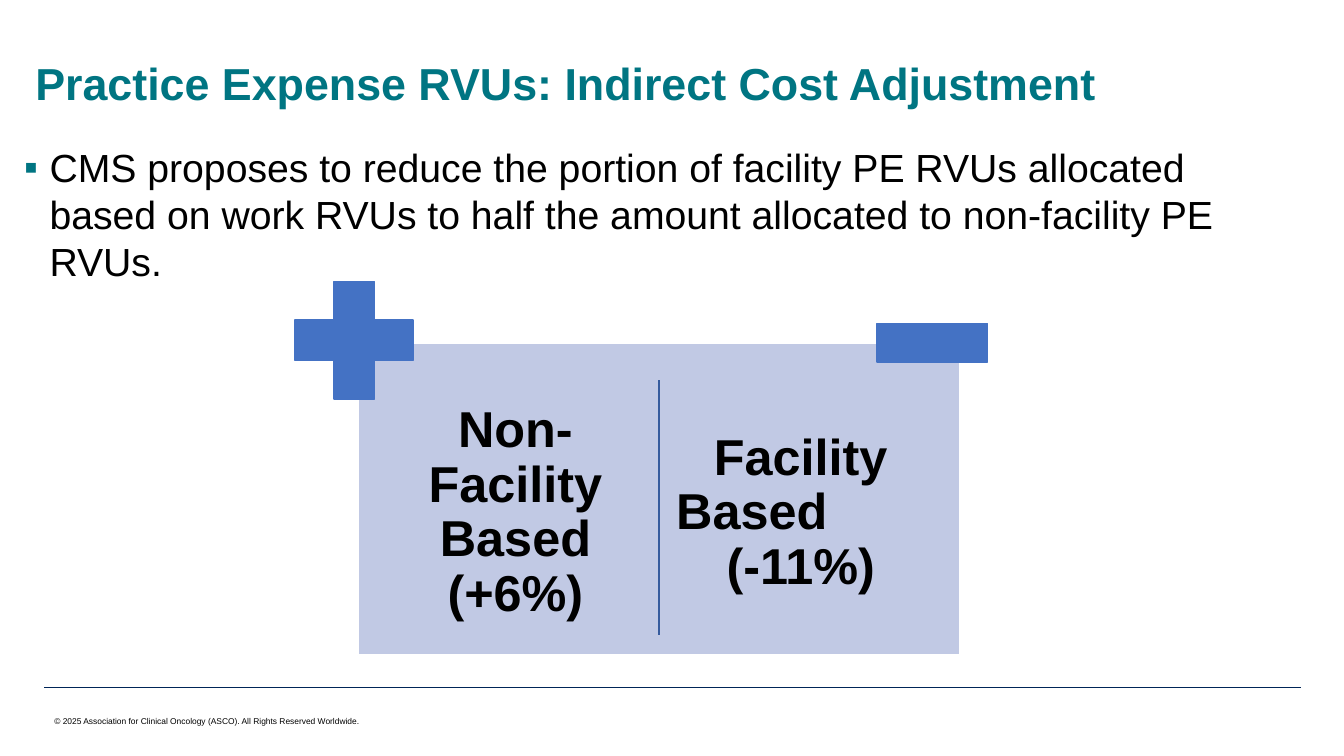
from pptx import Presentation
from pptx.dml.color import RGBColor
from pptx.enum.shapes import MSO_CONNECTOR, MSO_SHAPE
from pptx.enum.text import MSO_ANCHOR, MSO_AUTO_SIZE, PP_ALIGN
from pptx.oxml.ns import qn
from pptx.util import Cm, Pt
from lxml import etree

TEAL = RGBColor(0x00, 0x75, 0x82)
NAVY = RGBColor(0x00, 0x25, 0x57)
BLUE = RGBColor(0x44, 0x72, 0xC4)
DARK_BLUE = RGBColor(0x36, 0x5B, 0x9D)
PALE_BLUE = RGBColor(0xC1, 0xC9, 0xE4)
BLACK = RGBColor(0x00, 0x00, 0x00)
WHITE = RGBColor(0xFF, 0xFF, 0xFF)

RECTANGLE, PLUS = MSO_SHAPE.RECTANGLE, MSO_SHAPE.CROSS
STRAIGHT = MSO_CONNECTOR.STRAIGHT
LEFT, CENTER = PP_ALIGN.LEFT, PP_ALIGN.CENTER
TOP, MIDDLE, BOTTOM = MSO_ANCHOR.TOP, MSO_ANCHOR.MIDDLE, MSO_ANCHOR.BOTTOM
FIT_SHAPE = MSO_AUTO_SIZE.SHAPE_TO_FIT_TEXT


class SlideBuilder:
    """Draws styled elements on one slide; lengths are centimetres."""

    font = "Arial"

    def __init__(self, page):
        self.page = page

    def text(self, left, top, width, height, lines, size, color=BLACK, bold=False,
             align=LEFT, anchor=TOP, spacing=None, inset=None, wrap=True):
        box = self.page.shapes.add_textbox(Cm(left), Cm(top), Cm(width), Cm(height))
        frame = box.text_frame
        frame.word_wrap = wrap
        frame.vertical_anchor = anchor
        if inset is not None:
            frame.margin_left = frame.margin_right = Cm(inset)
            frame.margin_top = frame.margin_bottom = Cm(inset)
        frame.text = "\n".join(lines)
        for para in frame.paragraphs:
            para.alignment = align
            para.line_spacing = spacing
            para.font.name = self.font
            para.font.size = Pt(size)
            para.font.bold = bold
            para.font.color.rgb = color
        return frame

    def indent(self, para, left, first=0):
        properties = para._p.get_or_add_pPr()
        properties.set("marL", str(Cm(left)))
        properties.set("indent", str(Cm(first)))
        return properties

    def bullet(self, para, symbol, color, hanging):
        properties = self.indent(para, hanging, -hanging)
        bullet_color = etree.Element(qn("a:buClr"))
        etree.SubElement(bullet_color, qn("a:srgbClr"), val=str(color))
        bullet_font = etree.Element(qn("a:buFont"), typeface=self.font)
        bullet_char = etree.Element(qn("a:buChar"), char=symbol)
        # Bullet elements precede the paragraph's font settings
        position = properties.index(properties.find(qn("a:defRPr")))
        properties[position:position] = [bullet_color, bullet_font, bullet_char]

    def shape(self, kind, left, top, width, height, fill, line):
        shape = self.page.shapes.add_shape(kind, Cm(left), Cm(top), Cm(width), Cm(height))
        shape.shadow.inherit = False
        shape.fill.solid()
        shape.fill.fore_color.rgb = fill
        shape.line.color.rgb = line
        shape.line.width = Pt(1)
        return shape

    def line(self, x1, y1, x2, y2, color, width):
        line = self.page.shapes.add_connector(STRAIGHT, Cm(x1), Cm(y1), Cm(x2), Cm(y2))
        line.line.color.rgb = color
        line.line.width = Pt(width)
        etree.SubElement(line._element.spPr, qn("a:effectLst"))


def main():
    deck = Presentation()
    deck.slide_width, deck.slide_height = Cm(33.87), Cm(19.05)
    builder = SlideBuilder(deck.slides.add_slide(deck.slide_layouts[6]))

    # Footer
    builder.line(1.12, 17.32, 32.79, 17.32, NAVY, 0.25)
    footer = builder.text(
        1.12, 17.93, 8.38, 0.51,
        ["© 2025 Association for Clinical Oncology (ASCO). All Rights Reserved Worldwide."],
        6, wrap=False)
    footer.auto_size = FIT_SHAPE

    # Title and main point
    builder.text(0.64, 0.23, 31.62, 2.67, ["Practice Expense RVUs: Indirect Cost Adjustment"],
                 32, TEAL, bold=True, anchor=BOTTOM, spacing=0.9)
    point = builder.text(
        0.36, 3.48, 31.62, 10.69,
        ["CMS proposes to reduce the portion of facility PE RVUs allocated based on work "
         "RVUs to half the amount allocated to non-facility PE RVUs."], 28)
    builder.bullet(point.paragraphs[0], "▪", TEAL, 0.64)

    # Comparison panel with one column per setting
    builder.shape(RECTANGLE, 9.02, 8.66, 15.16, 7.85, PALE_BLUE, WHITE)
    columns = [(9.47, ["Non-Facility Based (+6%)"]),
               (16.66, ["Facility", "Based", "(-11%)"])]
    for left, lines in columns:
        column = builder.text(left, 9.58, 7.04, 6.71, lines, 36, bold=True, align=CENTER,
                              anchor=MIDDLE, spacing=0.9, inset=0.18)
    based = column.paragraphs[1]
    based.alignment = LEFT
    builder.indent(based, 0.2)

    # Plus and minus signs, divider
    plus = builder.shape(PLUS, 7.44, 7.09, 2.97, 2.97, BLUE, BLUE)
    plus.adjustments[0] = 0.328
    builder.shape(RECTANGLE, 22.1, 8.15, 2.79, 0.97, BLUE, BLUE)
    builder.line(16.61, 9.58, 16.61, 16, DARK_BLUE, 1)

    deck.save("out.pptx")


if __name__ == "__main__":
    main()
